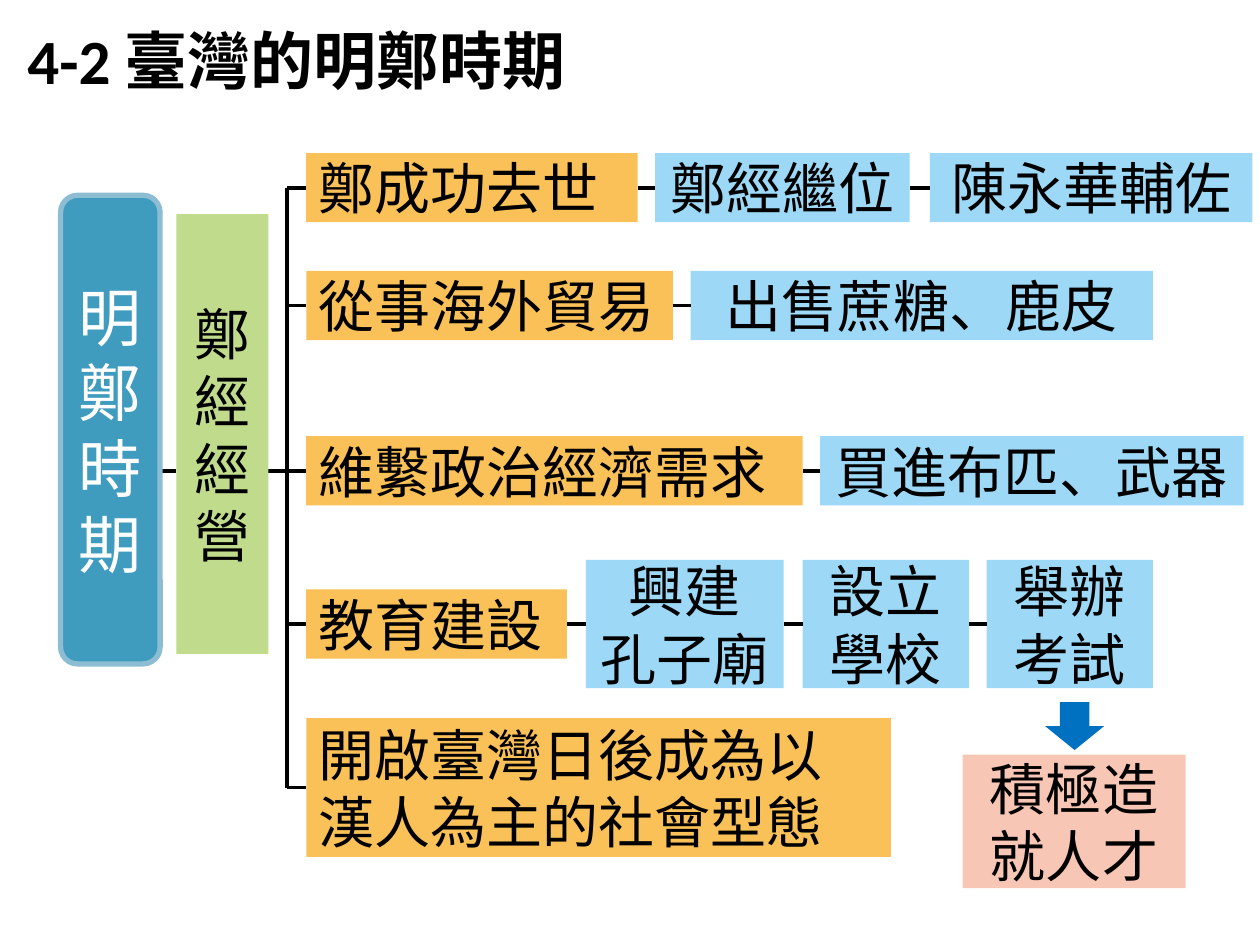
from dataclasses import dataclass
from itertools import pairwise
from typing import NamedTuple

from lxml import etree
from pptx import Presentation
from pptx import util as u
from pptx.dml import color as dml
from pptx.enum import shapes as es, text as et
from pptx.oxml import ns
from pptx.shapes import autoshape, connector


@dataclass(frozen=True)
class Theme:
    ink: str = "000000"
    white: str = "FFFFFF"
    era: str = "3F9CBF"
    era_edge: str = "8DBDD3"
    ruler: str = "C0DB8C"
    topic: str = "F9C158"
    detail: str = "9DD9F6"
    outcome: str = "F8C6B5"
    arrow: str = "0070C0"
    heading_size: float = 36
    body_size: float = 32
    leading: float = 1.2
    body_font: str = "Noto Sans CJK SC"
    number_font: str = "Calibri"
    heading_font: str = "Arial"


class Box(NamedTuple):
    words: str
    left: float
    width: float
    height: float = 39.5


class Row(NamedTuple):
    middle: float
    topic: Box
    details: tuple[Box, ...] = ()


THEME = Theme()
TRUNK_X = 164.2
ERA = Box("明鄭時期", 34.6, 56.9, 267.8)
RULER = Box("鄭經經營", 100.8, 52.6, 251.3)
OUTCOME = Box("積極造就人才", 550.1, 127.4, 76.3)
ROWS = (
    Row(107.2, Box("鄭成功去世", 175, 189.4),
        (Box("鄭經繼位", 374.4, 145.4), Box("陳永華輔佐", 531.4, 184.3))),
    Row(174.6, Box("從事海外貿易", 175, 209.5),
        (Box("出售蔗糖、鹿皮", 394.6, 264.2),)),
    Row(269, Box("維繫政治經濟需求", 175, 283.7),
        (Box("買進布匹、武器", 468.7, 241.9),)),
    Row(356.6, Box("教育建設", 175, 149),
        (Box("興建\n孔子廟", 334.8, 113, 73.4),
         Box("設立學校", 458.6, 95, 73.4),
         Box("舉辦考試", 563.8, 95, 73.4))),
    Row(450, Box("開啟臺灣日後成為以漢人為主的社會型態", 175, 334, 79.2)),
)


def rgb(value: str) -> dml.RGBColor:
    return dml.RGBColor.from_string(value)


def add_text(paragraph, words: str, *, size: float, font: str, color: str,
             bold: bool = False) -> None:
    run = paragraph.add_run()
    run.text = words
    run.font.size = u.Pt(size)
    run.font.name = font
    run.font.bold = bold
    run.font.color.rgb = rgb(color)
    etree.SubElement(run.font._element, ns.qn("a:ea")).set("typeface", font)


def add_box(slide, box: Box, middle: float, fill: str, *,
            align=et.PP_ALIGN.CENTER, size: float = THEME.body_size,
            color: str = THEME.ink, rounding: float = 0,
            edge: str | None = None) -> autoshape.Shape:
    shape = slide.shapes.add_shape(
        es.MSO_SHAPE.ROUNDED_RECTANGLE, u.Pt(box.left),
        u.Pt(middle - box.height / 2), u.Pt(box.width), u.Pt(box.height))
    shape.adjustments[0] = rounding
    shape.shadow.inherit = False
    shape.fill.solid()
    shape.fill.fore_color.rgb = rgb(fill)
    if edge:
        shape.line.color.rgb = rgb(edge)
        shape.line.width = u.Pt(3)
    else:
        shape.line.fill.background()
    frame = shape.text_frame
    frame.word_wrap = True
    frame.vertical_anchor = et.MSO_ANCHOR.MIDDLE
    frame.margin_top = frame.margin_bottom = u.Pt(0)
    for index, words in enumerate(box.words.split("\n")):
        paragraph = frame.add_paragraph() if index else frame.paragraphs[0]
        paragraph.alignment = align
        paragraph.line_spacing = u.Pt(size * THEME.leading)
        add_text(paragraph, words, size=size, font=THEME.body_font, color=color)
    return shape


def add_line(slide, start: tuple[float, float],
             end: tuple[float, float]) -> connector.Connector:
    line = slide.shapes.add_connector(
        es.MSO_CONNECTOR.STRAIGHT, *(u.Pt(value) for value in start + end))
    line.line.color.rgb = rgb(THEME.ink)
    line.line.width = u.Pt(2.25)
    etree.SubElement(line._element.spPr, ns.qn("a:effectLst"))
    return line


def add_heading(slide) -> None:
    heading = slide.shapes.add_textbox(u.Pt(8.6), u.Pt(8.6), u.Pt(331), u.Pt(51))
    frame = heading.text_frame
    frame.word_wrap = False
    frame.auto_size = et.MSO_AUTO_SIZE.SHAPE_TO_FIT_TEXT
    for words, font in (("4-2 ", THEME.number_font),
                        ("臺灣的明鄭時期", THEME.heading_font)):
        add_text(frame.paragraphs[0], words, size=THEME.heading_size, font=font,
                 color=THEME.ink, bold=True)


def add_row(slide, row: Row) -> None:
    topic = add_box(slide, row.topic, row.middle, THEME.topic,
                    align=et.PP_ALIGN.LEFT)
    branch = add_line(slide, (TRUNK_X, row.middle), (row.topic.left, row.middle))
    branch.end_connect(topic, 1)
    details = [add_box(slide, box, row.middle, THEME.detail) for box in row.details]
    boxes = (row.topic, *row.details)
    for (before, after), (source, target) in zip(
            pairwise(boxes), pairwise([topic, *details])):
        link = add_line(slide, (before.left + before.width, row.middle),
                        (after.left, row.middle))
        link.begin_connect(source, 3)
        link.end_connect(target, 1)


def add_arrow(slide) -> None:
    arrow = slide.shapes.add_shape(es.MSO_SHAPE.DOWN_ARROW, u.Pt(597.2),
                                   u.Pt(401.2), u.Pt(33.8), u.Pt(27.4))
    arrow.shadow.inherit = False
    arrow.fill.solid()
    arrow.fill.fore_color.rgb = rgb(THEME.arrow)
    arrow.line.fill.background()


def main() -> None:
    deck = Presentation()
    deck.slide_width, deck.slide_height = u.Pt(720), u.Pt(540)
    slide = deck.slides.add_slide(deck.slide_layouts[6])
    add_heading(slide)
    for row in ROWS:
        add_row(slide, row)
    add_line(slide, (TRUNK_X, ROWS[0].middle), (TRUNK_X, ROWS[-1].middle))
    stem = ROWS[2].middle
    add_line(slide, (ERA.left + ERA.width, stem), (RULER.left, stem))
    add_line(slide, (RULER.left + RULER.width, stem), (TRUNK_X, stem))
    add_box(slide, RULER, 248, THEME.ruler)
    add_box(slide, ERA, 245.5, THEME.era, size=THEME.heading_size,
            color=THEME.white, rounding=0.17, edge=THEME.era_edge)
    add_arrow(slide)
    add_box(slide, OUTCOME, 469.4, THEME.outcome)
    deck.save("out.pptx")


if __name__ == "__main__":
    main()
